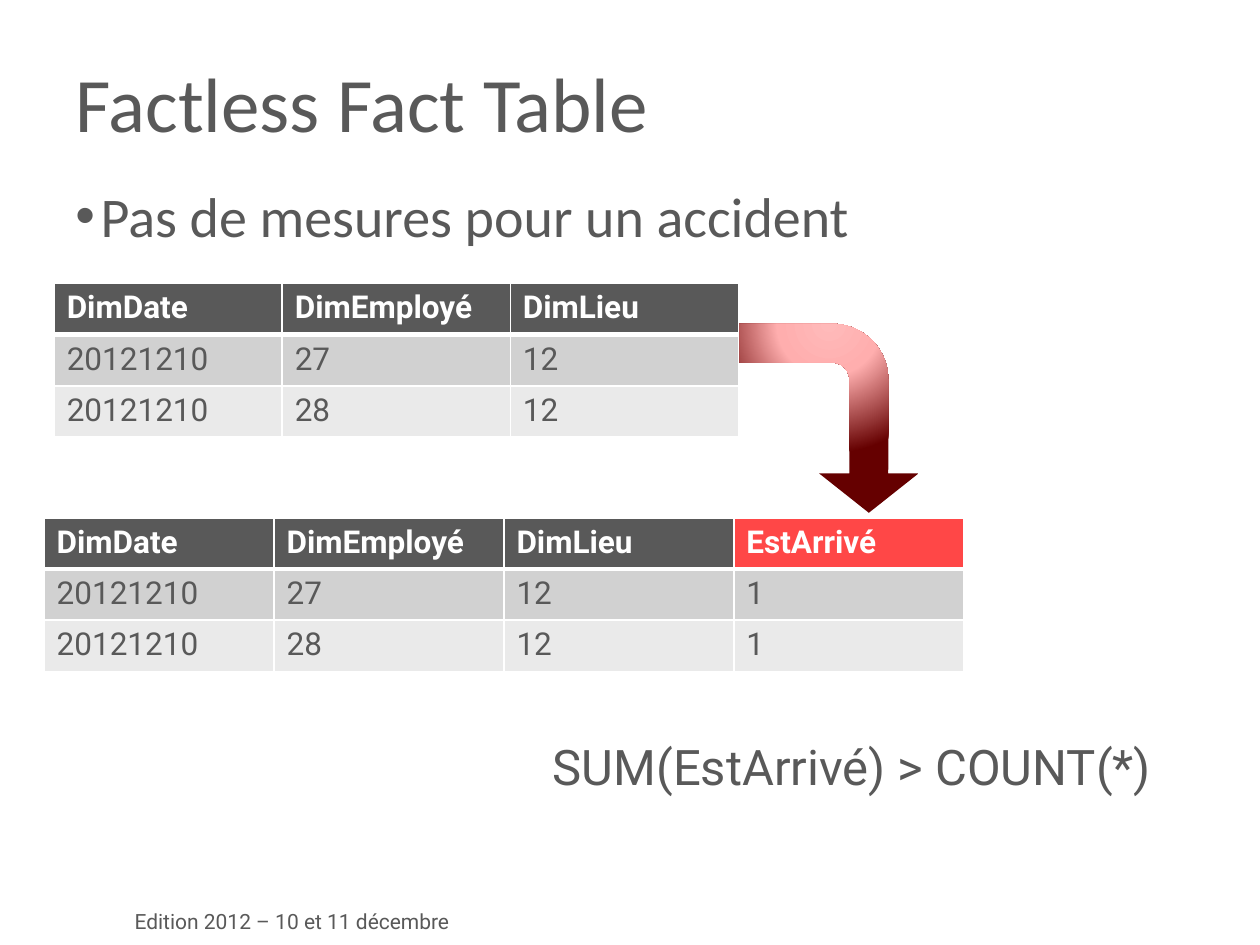
from dataclasses import dataclass

from lxml.etree import SubElement
from pptx import Presentation
from pptx.dml.color import RGBColor
from pptx.enum.shapes import MSO_SHAPE as Preset
from pptx.enum.text import MSO_ANCHOR as Anchor
from pptx.oxml import parse_xml
from pptx.oxml.ns import nsdecls, qn
from pptx.slide import Slide
from pptx.util import Inches, Pt

COLORS = {
    "text": "595959",
    "white": "FFFFFF",
    "accent": "FF4747",
    "odd_row": "D1D1D1",
    "even_row": "EAEAEA",
    "glow": "FFBABA",
    "rose": "FFAEAE",
    "maroon": "650000",
}


@dataclass
class Label:
    text: str
    box: tuple[float, float, float, float]
    size: int
    font: str = "Roboto"
    wrap: bool = False
    anchor: Anchor = Anchor.TOP
    bullet: bool = False


@dataclass
class FactTable:
    box: tuple[float, float, float, float]
    rows: list[list[str]]


LABELS = [
    Label("Edition 2012 – 10 et 11 décembre", (0.97, 7.16, 2.77, 0.3), 12),
    Label("Factless Fact Table", (0.5, 0.3, 9, 1.01), 44, "Calibri", True, Anchor.MIDDLE),
    Label("Pas de mesures pour un accident", (0.5, 1.39, 9, 5.36), 32, "Calibri", True, bullet=True),
    Label("SUM(EstArrivé) > COUNT(*)", (4.29, 5.8, 4.97, 0.57), 28),
]
FACT_ROWS = [
    ["DimDate", "DimEmployé", "DimLieu"],
    ["20121210", "27", "12"],
    ["20121210", "28", "12"],
]
FLAG_COLUMN = ["EstArrivé", "1", "1"]
TABLES = [
    FactTable((0.43, 2.25, 5.43, 1.22), FACT_ROWS),
    FactTable((0.35, 4.11, 7.3, 1.22), [row + [flag] for row, flag in zip(FACT_ROWS, FLAG_COLUMN)]),
]


def color(name: str) -> RGBColor:
    """Return the named colour."""
    return RGBColor.from_string(COLORS[name])


def style_font(font, color_name: str, **formats) -> None:
    """Apply a colour and format values to a font."""
    for name, value in formats.items():
        setattr(font, name, value)
    font.color.rgb = color(color_name)


def add_bullet(paragraph) -> None:
    """Give a paragraph a hanging round bullet."""
    properties = paragraph._p.get_or_add_pPr()
    properties.set("marL", str(Inches(0.2)))
    properties.set("indent", str(Inches(-0.2)))
    SubElement(properties, qn("a:buFont"), typeface="Arial")
    SubElement(properties, qn("a:buChar"), char="•")


def add_label(slide: Slide, label: Label) -> None:
    """Draw one text box."""
    shape = slide.shapes.add_textbox(*map(Inches, label.box))
    frame = shape.text_frame
    for name, value in {"word_wrap": label.wrap, "vertical_anchor": label.anchor}.items():
        setattr(frame, name, value)
    paragraph = frame.paragraphs[0]
    if label.bullet:
        add_bullet(paragraph)
    run = paragraph.add_run()
    run.text = label.text
    style_font(run.font, "text", name=label.font, size=Pt(label.size))


def add_borders(cell, row: int) -> None:
    """Outline a cell in white, with a thick rule below the header."""
    properties = cell._tc.get_or_add_tcPr()
    widths = {"L": 1, "R": 1, "T": 3 if row == 1 else 1, "B": 3 if row == 0 else 1}
    for index, (side, width) in enumerate(widths.items()):
        border = parse_xml(
            f'<a:ln{side} {nsdecls("a")} w="{Pt(width)}"><a:solidFill>'
            f'<a:srgbClr val="{COLORS["white"]}"/></a:solidFill></a:ln{side}>'
        )
        properties.insert(index, border)


def cell_fill(row: int, text: str) -> str:
    """Name the fill colour of a cell."""
    if row == 0:
        return "accent" if text == FLAG_COLUMN[0] else "text"
    return "odd_row" if row % 2 else "even_row"


def add_fact_table(slide: Slide, fact_table: FactTable) -> None:
    """Draw one table with a dark header and shaded rows."""
    rows = fact_table.rows
    frame = slide.shapes.add_table(len(rows), len(rows[0]), *map(Inches, fact_table.box))
    for row, values in enumerate(rows):
        for column, text in enumerate(values):
            cell = frame.table.cell(row, column)
            cell.fill.solid()
            cell.fill.fore_color.rgb = color(cell_fill(row, text))
            add_borders(cell, row)
            run = cell.text_frame.paragraphs[0].add_run()
            run.text = text
            header = row == 0
            style_font(run.font, "white" if header else "text", name="Roboto", size=Pt(18), bold=header)


def add_bent_arrow(slide: Slide) -> None:
    """Draw the arrow from the first table to the added column."""
    shape = slide.shapes.add_shape(Preset.BENT_ARROW, *map(Inches, (5.83, 2.61, 1.5, 1.42)))
    shape.rotation = 90
    shape.shadow.inherit = False
    shape.line.fill.background()
    for index, value in enumerate((0.217, 0.278, 0.22, 0.312)):
        shape.adjustments[index] = value
    shape.fill.solid()
    stops = "".join(
        f'<a:gs pos="{position * 1000}"><a:srgbClr val="{COLORS[name]}"/></a:gs>'
        for position, name in ((0, "glow"), (40, "rose"), (100, "maroon"))
    )
    gradient = parse_xml(
        f'<a:gradFill {nsdecls("a")} rotWithShape="1"><a:gsLst>{stops}</a:gsLst>'
        '<a:path path="circle"><a:fillToRect l="50000" t="-80000" r="50000" b="180000"/>'
        "</a:path></a:gradFill>"
    )
    properties = shape._element.spPr
    properties.replace(properties.find(qn("a:solidFill")), gradient)


def main() -> None:
    """Build and save the slide."""
    presentation = Presentation()
    presentation.slide_width, presentation.slide_height = Inches(10), Inches(7.5)
    slide = presentation.slides.add_slide(presentation.slide_layouts[6])
    for label in LABELS[:-1]:
        add_label(slide, label)
    for fact_table in TABLES:
        add_fact_table(slide, fact_table)
    add_bent_arrow(slide)
    add_label(slide, LABELS[-1])
    presentation.save("out.pptx")


if __name__ == "__main__":
    main()
